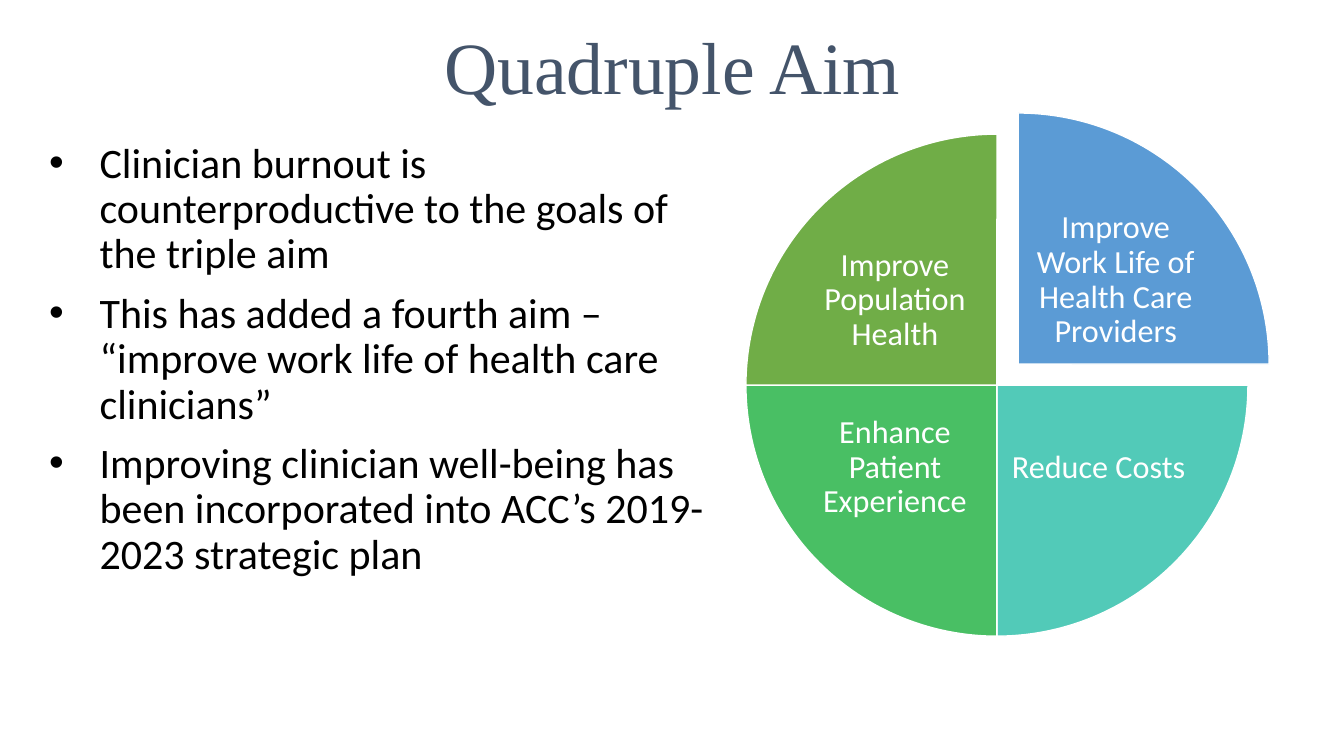
from dataclasses import dataclass

from lxml import etree
from pptx import Presentation
from pptx.dml.color import RGBColor
from pptx.enum.shapes import MSO_SHAPE as Preset
from pptx.enum.text import MSO_ANCHOR as Anchor, PP_ALIGN as Align
from pptx.oxml.ns import qn
from pptx.slide import Slide
from pptx.text.text import _Paragraph as Paragraph, TextFrame
from pptx.util import Pt

COLORS = {
    "title": "44546A",
    "body": "000000",
    "white": "FFFFFF",
    "blue": "5B9BD5",
    "teal": "52CAB8",
    "green": "49BF64",
    "olive": "70AD47",
}
PIE_LEFT, PIE_TOP, PIE_SIZE = 532.8, 95.8, 358.6
LABEL_WIDTH, LABEL_HEIGHT = 132.5, 106.6
QUARTER, FULL_TURN = 54, 216
PULL_OUT = 15.1


@dataclass(frozen=True)
class Aim:
    """One quarter of the pie with its label position."""

    text: str
    color: str
    label_left: float
    label_top: float
    offset: float = 0


AIMS = [
    Aim("Improve Work Life of Health Care Providers", "blue", 730.8, 146.9, PULL_OUT),
    Aim("Reduce Costs", "teal", 718.6, 280.8),
    Aim("Enhance Patient Experience", "green", 573.1, 280.8),
    Aim("Improve Population Health", "olive", 573.1, 161.3),
]
POINTS = [
    "Clinician burnout is counterproductive to the goals of the triple aim",
    "This has added a fourth aim – “improve work life of health care clinicians”",
    "Improving clinician well-being has been incorporated into ACC’s 2019-2023 strategic plan",
]


def rgb(name: str) -> RGBColor:
    """Return a named colour."""
    return RGBColor.from_string(COLORS[name])


def add_box(slide: Slide, left: float, top: float, width: float, height: float) -> TextFrame:
    """Add a wrapping text box and return its frame."""
    frame = slide.shapes.add_textbox(Pt(left), Pt(top), Pt(width), Pt(height)).text_frame
    frame.word_wrap = True
    return frame


def style(paragraph: Paragraph, font: str, size: float, color: str, align: Align) -> None:
    """Format a paragraph and its runs."""
    paragraph.alignment = align
    paragraph.line_spacing = 0.9
    for run in paragraph.runs:
        run.font.name = font
        run.font.size = Pt(size)
        run.font.color.rgb = rgb(color)


def add_bullet(paragraph: Paragraph) -> None:
    """Give a paragraph a hanging round bullet."""
    properties = paragraph._p.get_or_add_pPr()
    properties.set("marL", str(Pt(36)))
    properties.set("indent", str(-Pt(36)))
    etree.SubElement(properties, qn("a:buFont")).set("typeface", "Arial")
    etree.SubElement(properties, qn("a:buChar")).set("char", "•")


def add_title(slide: Slide) -> None:
    """Add the slide title."""
    frame = add_box(slide, 48, 12.2, 864, 90)
    frame.margin_top = Pt(9.7)
    frame.text = "Quadruple Aim"
    style(frame.paragraphs[0], "Times New Roman", 52.6, "title", Align.CENTER)


def add_points(slide: Slide) -> None:
    """Add the bulleted list."""
    frame = add_box(slide, 28.1, 97.9, 484.6, 338.4)
    for index, point in enumerate(POINTS):
        paragraph = frame.add_paragraph() if index else frame.paragraphs[0]
        paragraph.text = point
        add_bullet(paragraph)
        style(paragraph, "Calibri", 30, "body", Align.LEFT)
        paragraph.space_before = Pt(10 if index else 0)


def add_aim(slide: Slide, aim: Aim, index: int) -> None:
    """Draw one quarter, clockwise from the top, and its label."""
    shape = slide.shapes.add_shape(
        Preset.PIE, Pt(PIE_LEFT + aim.offset), Pt(PIE_TOP - aim.offset), Pt(PIE_SIZE), Pt(PIE_SIZE)
    )
    shape.shadow.inherit = False
    shape.adjustments[0] = (index - 1) * QUARTER % FULL_TURN
    shape.adjustments[1] = index * QUARTER
    shape.fill.solid()
    shape.fill.fore_color.rgb = rgb(aim.color)
    shape.line.color.rgb = rgb("white")
    shape.line.width = Pt(1)

    frame = add_box(slide, aim.label_left, aim.label_top, LABEL_WIDTH, LABEL_HEIGHT)
    frame.margin_left = frame.margin_right = frame.margin_top = frame.margin_bottom = Pt(2.3)
    frame.vertical_anchor = Anchor.MIDDLE
    frame.text = aim.text
    style(frame.paragraphs[0], "Calibri", 23, "white", Align.CENTER)


def main() -> None:
    """Build and save the presentation."""
    presentation = Presentation()
    presentation.slide_width, presentation.slide_height = Pt(960), Pt(540)
    slide = presentation.slides.add_slide(presentation.slide_layouts[6])
    add_title(slide)
    add_points(slide)
    for index, aim in enumerate(AIMS):
        add_aim(slide, aim, index)
    presentation.save("out.pptx")


if __name__ == "__main__":
    main()
